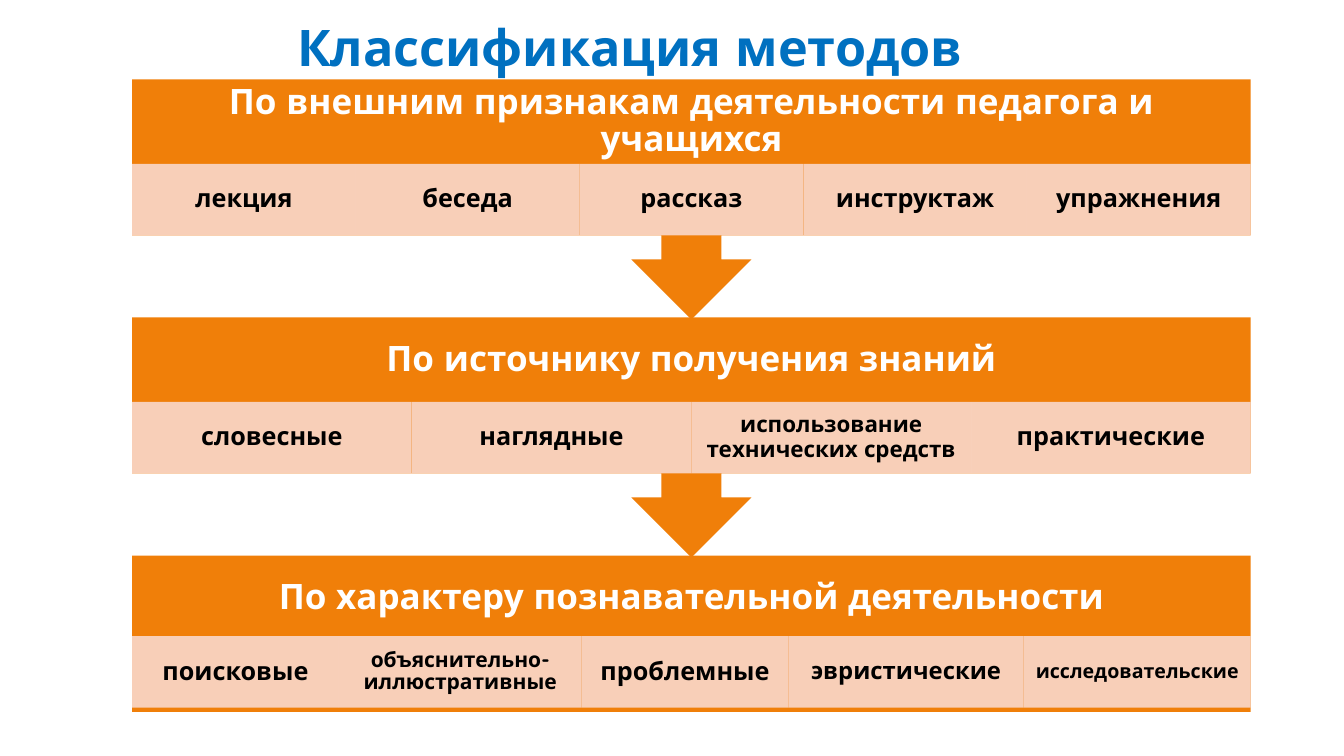
from pptx import Presentation
from pptx.dml.color import RGBColor
from pptx.enum.shapes import MSO_SHAPE
from pptx.enum.text import MSO_ANCHOR, PP_ALIGN
from pptx.oxml.xmlchemy import OxmlElement
from pptx.util import Cm, Pt

COLORS = {"title": "0070C0", "panel": "F07F09", "cell": "F9D8CC",
          "white": "FFFFFF", "black": "000000"}
FONT = "Quicksand"
LEFT, WIDTH = 3.33, 28.19
TOP, STEP = 2, 6
HEADER_H, CELL_H = 2.13, 1.8
BODY_H, CALLOUT_H = 3.94, 6.05


def write(sp, text, size, color, inset_x, inset_y, spacing=0.9,
          anchor=MSO_ANCHOR.MIDDLE):
    tf = sp.text_frame
    frame_format = {"word_wrap": True, "vertical_anchor": anchor,
                    "margin_left": Cm(inset_x), "margin_right": Cm(inset_x),
                    "margin_top": Cm(inset_y), "margin_bottom": Cm(inset_y)}
    for name, value in frame_format.items():
        setattr(tf, name, value)
    p = tf.paragraphs[0]
    p.alignment, p.line_spacing = PP_ALIGN.CENTER, spacing
    r = p.add_run()
    r.text = text
    for name, value in {"name": FONT, "size": Pt(size), "bold": True}.items():
        setattr(r.font, name, value)
    r.font.color.rgb = RGBColor.from_string(COLORS[color])


def add_block(kind, left, top, width, height, color):
    sp = s.shapes.add_shape(kind, Cm(left), Cm(top), Cm(width), Cm(height))
    sp.shadow.inherit = False
    sp.fill.solid()
    sp.fill.fore_color.rgb = RGBColor.from_string(COLORS[color])
    sp.line.fill.background()
    return sp


prs = Presentation()
prs.slide_width, prs.slide_height = Cm(33.87), Cm(19.05)
s = prs.slides.add_slide(prs.slide_layouts[6])

# Title
sp = s.shapes.add_textbox(Cm(5.72), Cm(0), Cm(20.32), Cm(2.11))
write(sp, "Классификация методов", 36, "title", 0.33, 0.18, 0.85,
      MSO_ANCHOR.BOTTOM)

# Panels: heading, offset of the cell row, cells as (text, size, width)
fifth, quarter = WIDTH / 5, WIDTH / 4
panels = [
    ("По внешним признакам деятельности педагога и учащихся", 2.13,
     [(word, 18, fifth) for word in
      ("лекция", "беседа", "рассказ", "инструктаж", "упражнения")]),
    ("По источнику получения знаний", 2.13,
     [("словесные", 18, quarter), ("наглядные", 18, quarter),
      ("использование технических средств", 16, quarter),
      ("практические", 18, quarter)]),
    ("По характеру познавательной деятельности", 2.03,
     [("поисковые", 18, 5.21), ("объяснительно-иллюстративные", 15, 6.12),
      ("проблемные", 18, 5.21), ("эвристические", 17, 5.93),
      ("исследовательские", 14, 5.72)]),
]

for i, (heading, cell_offset, cells) in enumerate(panels):
    top = TOP + i * STEP

    # Every panel but the last points down to the next one
    if i < len(panels) - 1:
        add_block(MSO_SHAPE.DOWN_ARROW_CALLOUT, LEFT, top, WIDTH, CALLOUT_H,
                  "panel")
    else:
        add_block(MSO_SHAPE.RECTANGLE, LEFT, top, WIDTH, BODY_H, "panel")
    sp = s.shapes.add_textbox(Cm(LEFT), Cm(top), Cm(WIDTH), Cm(HEADER_H))
    write(sp, heading, 25, "white", 0.48, 0.48)

    # Row of slightly transparent cells
    left = LEFT
    for text, size, width in cells:
        sp = add_block(MSO_SHAPE.RECTANGLE, left, top + cell_offset, width,
                       CELL_H, "cell")
        alpha = OxmlElement("a:alpha")
        alpha.set("val", "90000")
        sp.fill._xPr.find(".//{*}srgbClr").append(alpha)
        write(sp, text, size, "black", size * 0.019, 0.06)
        left += width

prs.save("out.pptx")
